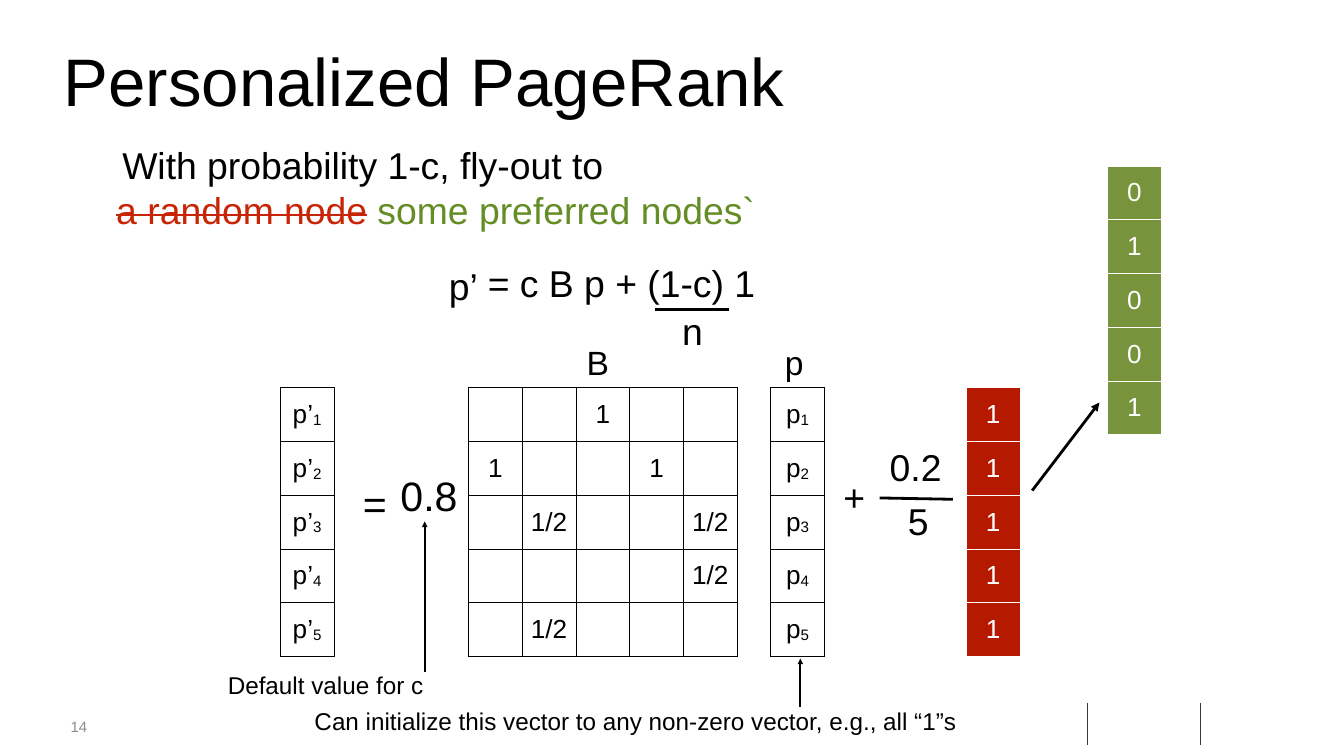
from lxml.etree import SubElement
from pptx import Presentation
from pptx.dml.color import RGBColor
from pptx.enum.shapes import MSO_CONNECTOR
from pptx.enum.text import MSO_ANCHOR, PP_ALIGN
from pptx.oxml.ns import qn
from pptx.util import Inches, Pt

BLACK, WHITE, GRAY = "000000", "FFFFFF", "8C8C8C"
RED, GREEN = "B51A00", "77933C"
CELL, PAD, INDENT = 0.8, 0.11, 0.13
TOP = 5.77


def color(code):
    return RGBColor.from_string(code)


def add_run(par, text, size=40, ink=BLACK, strike=False, base=0):
    run = par.add_run()
    run.text = text
    font = run.font
    font.name, font.size = "Arial", Pt(size)
    font.color.rgb = color(ink)
    props = run._r.get_or_add_rPr()
    if strike:
        props.set("strike", "sngStrike")
    if base:
        props.set("baseline", str(base * 1000))


def set_frame(frame, pad=PAD, wrap=False, indent=0.0, first=0.0):
    """Set insets, wrapping and indents; return the first paragraph."""
    frame.word_wrap = wrap
    frame.vertical_anchor = MSO_ANCHOR.MIDDLE
    frame.margin_left = frame.margin_right = Inches(pad)
    frame.margin_top = frame.margin_bottom = Inches(pad)
    par = frame.paragraphs[0]
    par.alignment = PP_ALIGN.LEFT
    props = par._p.get_or_add_pPr()
    props.set("marL", str(Inches(indent)))
    props.set("indent", str(Inches(first)))
    return par


def add_text(slide, text, x, y, w, h, size=40, ink=BLACK, **layout):
    box = slide.shapes.add_textbox(Inches(x), Inches(y), Inches(w), Inches(h))
    par = set_frame(box.text_frame, **layout)
    if text:
        add_run(par, text, size=size, ink=ink)
    return par


def add_title(slide, text):
    title = slide.shapes.title
    title.left, title.top = Inches(0.71), Inches(0.4)
    title.width, title.height = Inches(18.09), Inches(1.58)
    par = set_frame(title.text_frame, wrap=True, indent=INDENT)
    add_run(par, text, size=72)


def add_line(slide, x1, y1, x2, y2, width=3, ink=BLACK, arrow=False):
    line = slide.shapes.add_connector(
        MSO_CONNECTOR.STRAIGHT, Inches(x1), Inches(y1), Inches(x2), Inches(y2))
    line.line.color.rgb = color(ink)
    line.line.width = Pt(width)
    if arrow:
        SubElement(line.line._get_or_add_ln(), qn("a:tailEnd"), type="triangle")
    SubElement(line._element.spPr, qn("a:effectLst"))


def add_border(cell, ink):
    props = cell._tc.get_or_add_tcPr()
    for at, side in enumerate(("lnL", "lnR", "lnT", "lnB")):
        edge = props.makeelement(qn(f"a:{side}"), {"w": str(Pt(1))})
        solid = SubElement(edge, qn("a:solidFill"))
        SubElement(solid, qn("a:srgbClr"), val=ink)
        props.insert(at, edge)


def add_grid(slide, rows, x, y=TOP, fill=None, subs=False):
    """Draw a matrix of square cells; subs numbers the rows with subscripts."""
    ink = WHITE if fill else BLACK
    high, wide = len(rows), len(rows[0])
    table = slide.shapes.add_table(
        high, wide, Inches(x), Inches(y),
        Inches(CELL * wide), Inches(CELL * high)).table
    table.first_row = table.horz_banding = False
    for i, row in enumerate(rows):
        table.rows[i].height = Inches(CELL)
        for j, text in enumerate(row):
            cell = table.cell(i, j)
            cell.vertical_anchor = MSO_ANCHOR.MIDDLE
            cell.margin_left = cell.margin_right = Inches(PAD)
            cell.margin_top = cell.margin_bottom = Inches(PAD)
            if fill:
                cell.fill.solid()
                cell.fill.fore_color.rgb = color(fill)
            else:
                cell.fill.background()
            add_border(cell, ink)
            par = cell.text_frame.paragraphs[0]
            par.alignment = PP_ALIGN.CENTER
            if text:
                add_run(par, text, size=28, ink=ink)
            if subs:
                add_run(par, str(i + 1), size=28, ink=ink, base=-6)


def add_intro(slide):
    par = add_text(slide, "", 1.62, 2, 10.27, 1.57, wrap=True, first=0.09)
    add_run(par, "With probability 1-c, fly-out to ")
    par.add_line_break()
    add_run(par, "a random node", ink="C82506", strike=True)
    add_run(par, " ")
    add_run(par, "some preferred nodes`", ink="648D26")


def add_math(slide):
    for text, x, y, w, h, size in (
        ("p’", 6.44, 3.8, 0.92, 0.9, 40),
        ("= c B p + (1-c) 1", 7.02, 3.76, 4.59, 0.9, 40),
        ("n", 9.91, 4.47, 0.79, 0.9, 40),
        ("B", 8.49, 4.98, 0.84, 0.83, 36),
        ("p", 11.44, 4.98, 0.79, 0.83, 36),
        ("=", 5.16, 7, 0.84, 0.96, 44),
        ("0.8", 5.72, 6.89, 1.34, 0.96, 44),
        ("+", 12.31, 6.94, 0.81, 0.9, 40),
        ("0.2", 13, 6.49, 1.26, 0.9, 40),
        ("5", 13.27, 7.3, 0.79, 0.9, 40),
    ):
        add_text(slide, text, x, y, w, h, size=size, indent=INDENT)
    add_line(slide, 9.75, 4.61, 10.85, 4.61)
    add_line(slide, 13.09, 7.41, 14.18, 7.43)


def add_grids(slide):
    links = [
        ["", "", "1", "", ""],
        ["1", "", "", "1", ""],
        ["", "1/2", "", "", "1/2"],
        ["", "", "", "", "1/2"],
        ["", "1/2", "", "", ""],
    ]
    add_grid(slide, [["p’"]] * 5, 4.17, subs=True)
    add_grid(slide, links, 6.97)
    add_grid(slide, [["p"]] * 5, 11.47, subs=True)
    add_grid(slide, [["1"]] * 5, 14.38, fill=RED)
    add_grid(slide, [[bit] for bit in "01001"], 16.48, y=2.47, fill=GREEN)


def add_notes(slide):
    add_text(slide, "Default value for c", 3.28, 9.86, 3.17, 0.66, size=26)
    add_text(slide, "Can initialize this vector to any non-zero vector, e.g., all “1”s",
             4.57, 10.39, 9.88, 0.66, size=26)
    add_line(slide, 6.32, 10, 6.32, 7.76, width=2, arrow=True)
    add_line(slide, 11.91, 10.52, 11.91, 9.8, width=2, arrow=True)
    add_line(slide, 15.36, 7.3, 16.36, 5.99, arrow=True)


def add_footer(slide):
    for x in (16.18, 17.86):
        add_line(slide, x, 10.46, x, 11.09, width=1, ink="383838")
    add_text(slide, "14", 1.05, 10.68, 0.59, 0.27, size=16, ink=GRAY,
             pad=0, wrap=True)


def main():
    deck = Presentation()
    deck.slide_width, deck.slide_height = Inches(20), Inches(11.25)
    slide = deck.slides.add_slide(deck.slide_layouts[5])
    add_footer(slide)
    add_title(slide, "Personalized PageRank")
    add_intro(slide)
    add_math(slide)
    add_grids(slide)
    add_notes(slide)
    deck.save("out.pptx")


if __name__ == "__main__":
    main()
